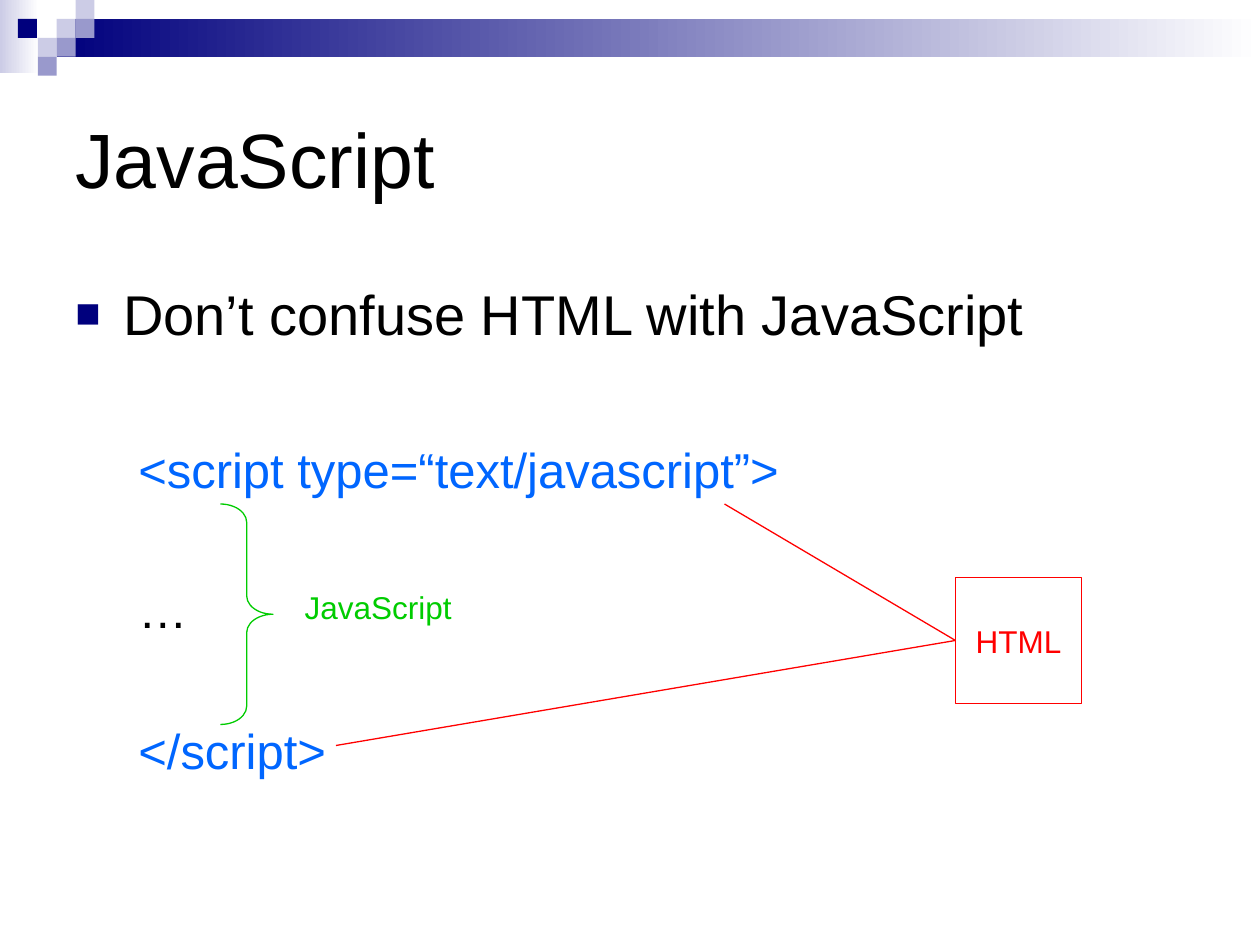
from dataclasses import dataclass

from lxml.etree import SubElement
from pptx import Presentation
from pptx.dml.color import RGBColor
from pptx.enum.shapes import MSO_CONNECTOR, MSO_SHAPE
from pptx.enum.text import MSO_ANCHOR, PP_ALIGN
from pptx.oxml.ns import qn
from pptx.util import Inches, Pt


@dataclass(frozen=True)
class Theme:
    font: str = "Arial"
    ink: str = "000000"
    navy: str = "00007D"
    mid: str = "9999CC"
    pale: str = "CCCCE6"
    white: str = "FFFFFF"
    code: str = "0066FF"
    red: str = "FF0000"
    green: str = "00CC00"
    title: int = 44
    body: int = 32
    sub: int = 28
    note: int = 18
    rule: float = 0.75


THEME = Theme()
CELL = Inches(1) // 12  # the slide is a grid of 120 columns by 90 rows
TILE = 1.8  # side of a corner tile, in cells


def grid(*cells):
    return [round(n * CELL) for n in cells]


def rgb(code):
    return RGBColor.from_string(code)


def add_shape(slide, kind, box, fill=None, line=None):
    shape = slide.shapes.add_shape(kind, *grid(*box))
    shape.shadow.inherit = False
    if fill is None:
        shape.fill.background()
    elif isinstance(fill, tuple):
        shape.fill.gradient()
        shape.fill.gradient_angle = 0
        for stop, code in zip(shape.fill.gradient_stops, fill):
            stop.color.rgb = rgb(code)
    else:
        shape.fill.solid()
        shape.fill.fore_color.rgb = rgb(fill)
    if line:
        shape.line.color.rgb = rgb(line)
        shape.line.width = Pt(THEME.rule)
    else:
        shape.line.fill.background()
    return shape


def add_line(slide, start, end, color):
    line = slide.shapes.add_connector(
        MSO_CONNECTOR.STRAIGHT, *grid(*start, *end))
    line.line.color.rgb = rgb(color)
    line.line.width = Pt(THEME.rule)
    SubElement(line._element.spPr, qn("a:effectLst"))


def set_text(para, text, size, color):
    para.text = text
    font = para.runs[0].font
    font.name, font.size = THEME.font, Pt(size)
    font.color.rgb = rgb(color)


def add_text(slide, box, wrap=True, anchor=MSO_ANCHOR.TOP):
    frame = slide.shapes.add_textbox(*grid(*box)).text_frame
    frame.word_wrap = wrap
    frame.vertical_anchor = anchor
    return frame


def indent(para, left, first):
    props = para._p.get_or_add_pPr()
    props.set("marL", str(Inches(left)))
    props.set("indent", str(Inches(first)))
    return props


def add_bullet(para):
    props = indent(para, 0.38, -0.38)
    color = SubElement(props, qn("a:buClr"))
    SubElement(color, qn("a:srgbClr")).set("val", THEME.navy)
    SubElement(props, qn("a:buSzPct")).set("val", "75000")
    SubElement(props, qn("a:buFont")).set("typeface", THEME.font)
    SubElement(props, qn("a:buChar")).set("char", "■")


def add_header(slide):
    # Fading bars
    rect = MSO_SHAPE.RECTANGLE
    add_shape(slide, rect, (0, 0, 3.7, 7), (THEME.pale, THEME.white))
    add_shape(slide, rect, (3 * TILE, TILE, 120 - 3 * TILE, 2 * TILE),
              (THEME.navy, THEME.white))
    # Corner tiles by column and row
    tiles = {
        THEME.pale: [(3, 1), (4, 0), (2, 2)],
        THEME.mid: [(4, 1), (3, 2), (2, 3)],
        THEME.navy: [(0.95, 1)],
    }
    for color, spots in tiles.items():
        for col, row in spots:
            add_shape(slide, rect, (col * TILE, row * TILE, TILE, TILE), color)


def add_body(slide):
    frame = add_text(slide, (6, 26, 108, 51))
    lead = frame.paragraphs[0]
    set_text(lead, "Don’t confuse HTML with JavaScript", THEME.body, THEME.ink)
    lead.space_before = Pt(3)
    add_bullet(lead)
    # Code lines, spaced apart
    code = [
        ("<script type=“text/javascript”>", THEME.code, 53),
        ("…", THEME.ink, 46.7),
        ("</script>", THEME.code, 46.7),
    ]
    for text, color, gap in code:
        para = frame.add_paragraph()
        set_text(para, text, THEME.sub, color)
        para.level = 1
        para.space_before = Pt(gap)
        SubElement(indent(para, 0.81, -0.31), qn("a:buNone"))


def add_notes(slide):
    # HTML box with a line to each tag
    box = add_shape(slide, MSO_SHAPE.RECTANGLE, (91, 55, 12, 12),
                    line=THEME.red)
    frame = box.text_frame
    frame.word_wrap = False
    frame.vertical_anchor = MSO_ANCHOR.MIDDLE
    para = frame.paragraphs[0]
    set_text(para, "HTML", THEME.note, THEME.red)
    para.alignment = PP_ALIGN.CENTER
    for end in [(69, 48), (32, 71)]:
        add_line(slide, (91, 61), end, THEME.red)

    # Brace around the script
    brace = add_shape(slide, MSO_SHAPE.RIGHT_BRACE, (21, 48, 5, 21),
                      line=THEME.green)
    brace.adjustments[0] = 0.35
    brace.adjustments[1] = 0.5
    label = add_text(slide, (27.84, 55.44, 16.44, 4.8), wrap=False)
    set_text(label.paragraphs[0], "JavaScript", THEME.note, THEME.green)


def main():
    deck = Presentation()
    deck.slide_width, deck.slide_height = grid(120, 90)
    slide = deck.slides.add_slide(deck.slide_layouts[6])
    add_header(slide)
    title = add_text(slide, (6, 6, 108, 18), anchor=MSO_ANCHOR.MIDDLE)
    set_text(title.paragraphs[0], "JavaScript", THEME.title, THEME.ink)
    add_body(slide)
    add_notes(slide)
    deck.save("out.pptx")


if __name__ == "__main__":
    main()
